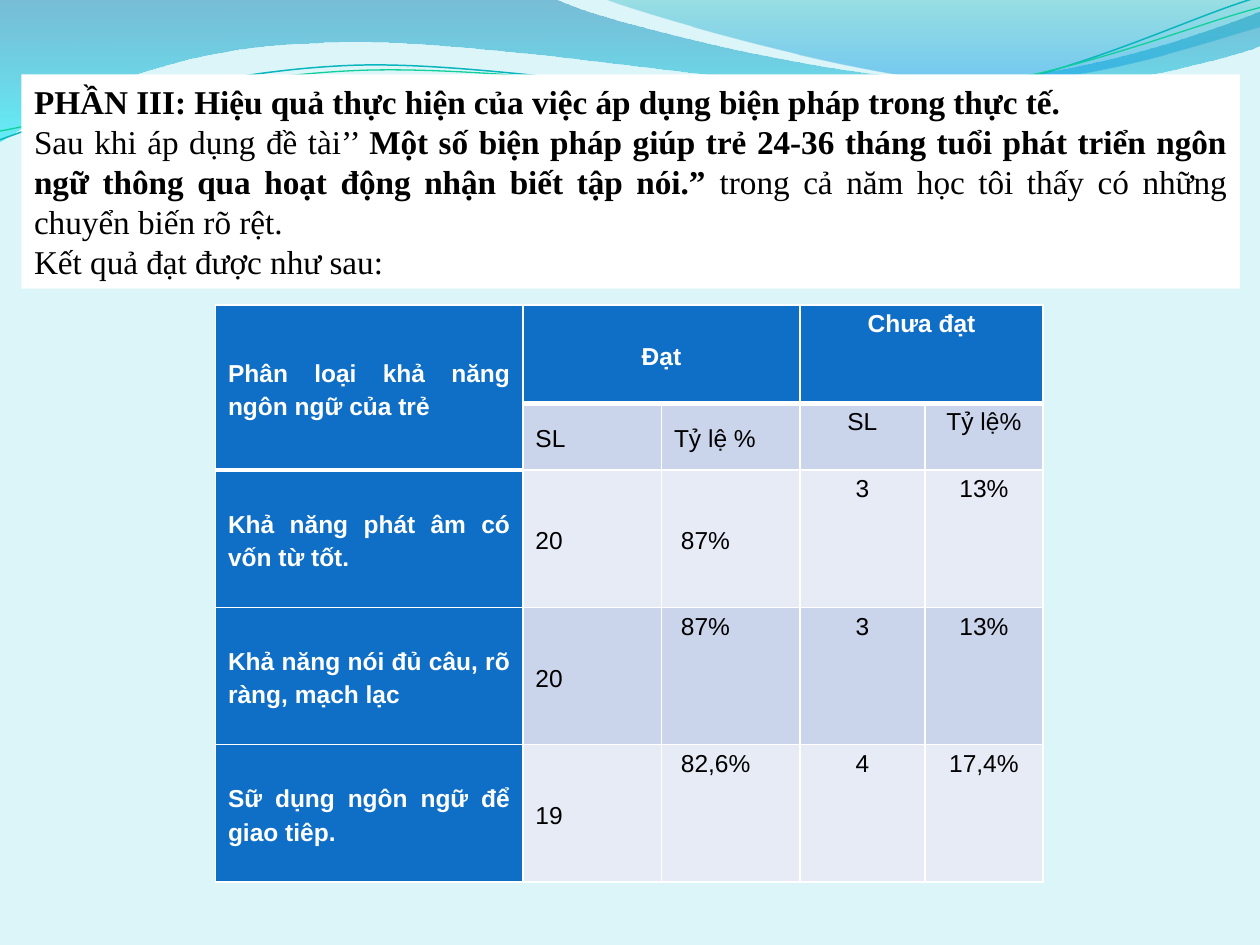
import pptx
import pptx.dml.color
import pptx.enum.text
import pptx.oxml
import pptx.oxml.ns
import pptx.util

RGBColor = pptx.dml.color.RGBColor
ALIGN = pptx.enum.text.PP_ALIGN
ANCHOR = pptx.enum.text.MSO_ANCHOR
AUTO_SIZE = pptx.enum.text.MSO_AUTO_SIZE
Pt = pptx.util.Pt
qn = pptx.oxml.ns.qn
NAMESPACE = pptx.oxml.ns.nsdecls("a")
PX = 9144  # 100 px to the inch

BACKGROUND = RGBColor(0xDB, 0xF5, 0xF9)
WHITE = RGBColor(0xFF, 0xFF, 0xFF)
BLACK = RGBColor(0x00, 0x00, 0x00)
HEADER_BLUE = RGBColor(0x0F, 0x6F, 0xC6)
BAND_DARK = RGBColor(0xCA, 0xD4, 0xEA)
BAND_LIGHT = RGBColor(0xE6, 0xEB, 0xF5)
DEEP_BLUE = RGBColor(0x00, 0x79, 0xAD)
CYAN = RGBColor(0x00, 0xE9, 0xF7)
SEA_GREEN = RGBColor(0x00, 0xAB, 0xB4)
SKY_BLUE = RGBColor(0x00, 0x99, 0xE4)
TEAL_LINE = RGBColor(0x09, 0xB6, 0xBE)
GREEN_LINE = RGBColor(0x10, 0xCF, 0x9B)

presentation = pptx.Presentation()
presentation.slide_width = 1000 * PX
presentation.slide_height = 750 * PX
slide = presentation.slides.add_slide(presentation.slide_layouts[5])
slide.background.fill.solid()
slide.background.fill.fore_color.rgb = BACKGROUND
master_placeholder = presentation.slide_master.shapes[0].element


def add_master_wave(segments, closed, shape_id):
    """Draw segments of 2 numbers as lines and of 6 as Bezier curves, on the master."""
    points = [segment[i:i + 2] for segment in segments for i in range(0, len(segment), 2)]
    builder = slide.shapes.build_freeform(*points[0], scale=PX)
    builder.add_line_segments(points[1:], close=closed)
    wave = builder.convert_to_shape()
    wave.shadow.inherit = False
    wave.element.nvSpPr.cNvPr.set("id", str(shape_id))

    corners = iter(wave.element.spPr.findall(".//" + qn("a:lnTo")))
    for segment in segments[1:]:
        group = [next(corners) for _ in range(len(segment) // 2)]
        if len(group) == 3:
            curve = pptx.oxml.parse_xml(f"<a:cubicBezTo {NAMESPACE}/>")
            group[0].addprevious(curve)
            for corner in group:
                curve.append(corner[0])
                corner.getparent().remove(corner)
    master_placeholder.addprevious(wave.element)
    return wave


# Gradient waves: outline, then stops of position %, colour, opacity %
filled_waves = [
    ([(0, 0), (440, -1), (476, 17, 664, 63, 758, 63), (853, 63, 958, 26, 1000, 9),
      (1001, 36), (983, 44, 870, 76, 746, 75), (622, 75, 382, 28, 257, 34),
      (129, 36, 46, 83, -1, 113), (0, 0)],
     [(0, DEEP_BLUE, 45), (100, CYAN, 55)]),
    ([(479, -1), (509, 11, 682, 62, 769, 65), (856, 69, 961, 32, 1000, 21),
      (1000, 0), (479, -1)],
     [(0, SEA_GREEN, 30), (80, SKY_BLUE, 45), (100, SKY_BLUE, 45)]),
]
for shape_id, (outline, stops) in enumerate(filled_waves, 101):
    wave = add_master_wave(outline, True, shape_id)
    wave.line.fill.background()
    wave.fill.gradient()
    wave.fill.gradient_angle = 270
    stop_list = wave.element.spPr.find(".//" + qn("a:gsLst"))
    for default_stop in list(stop_list):
        stop_list.remove(default_stop)
    for position, color, opacity in stops:
        stop_list.append(pptx.oxml.parse_xml(
            f'<a:gs {NAMESPACE} pos="{position * 1000}"><a:srgbClr val="{color}">'
            f'<a:alpha val="{opacity * 1000}"/></a:srgbClr></a:gs>'))

line_waves = [
    ([(0, 111), (48, 93, 158, 57, 277, 52), (395, 47, 593, 89, 713, 80),
      (833, 71, 938, 15, 998, -2)], TEAL_LINE, 0.85),
    ([(0, 104), (47, 96, 164, 61, 283, 56), (403, 51, 597, 84, 717, 75),
      (836, 67, 941, 21, 1000, 6)], GREEN_LINE, 0.75),
]
for shape_id, (outline, color, width) in enumerate(line_waves, 103):
    wave = add_master_wave(outline, False, shape_id)
    wave.fill.background()
    wave.line.color.rgb = color
    wave.line.width = Pt(width)

# Results table
column_widths = [244, 110, 110, 99, 94]
row_heights = [78, 53, 109, 109, 109]
results = [
    ["Phân loại khả năng ngôn ngữ của trẻ", "Đạt", "", "Chưa đạt", ""],
    ["", "SL", "Tỷ lệ %", "SL", "Tỷ lệ%"],
    ["Khả năng phát âm có vốn từ tốt.", "20", " 87%", "3", "13%"],
    ["Khả năng nói đủ câu, rõ ràng, mạch lạc", "20", " 87%", "3", "13%"],
    ["Sữ dụng ngôn ngữ để giao tiêp.", "19", " 82,6%", "4", "17,4%"],
]
table = slide.shapes.add_table(
    len(row_heights), len(column_widths), 171 * PX, 242 * PX,
    sum(column_widths) * PX, sum(row_heights) * PX).table
for column, width in zip(table.columns, column_widths):
    column.width = width * PX
for row, height in zip(table.rows, row_heights):
    row.height = height * PX
for first, last in [((0, 0), (1, 0)), ((0, 1), (0, 2)), ((0, 3), (0, 4))]:
    table.cell(*first).merge(table.cell(*last))

# Cells with the thick header rule below them
header_bottom = {(0, column) for column in range(5)} | {(1, 0)}
for row, texts in enumerate(results):
    for column, text in enumerate(texts):
        cell = table.cell(row, column)
        is_header = row == 0 or column == 0
        side_margin = 10 * PX if column < 3 else 0
        is_middle = column < 2 or (column == 2 and row < 3)
        cell_format = {
            "margin_left": side_margin, "margin_right": side_margin,
            "margin_top": 0, "margin_bottom": 0,
            "vertical_anchor": ANCHOR.MIDDLE if is_middle else ANCHOR.TOP,
        }
        for name, value in cell_format.items():
            setattr(cell, name, value)

        properties = cell._tc.get_or_add_tcPr()
        thick_sides = {"T": (row - 1, column) in header_bottom and (row, column) != (1, 0),
                       "B": (row, column) in header_bottom}
        for side in "LRTB":
            points = 3 if thick_sides.get(side) else 1
            properties.append(pptx.oxml.parse_xml(
                f'<a:ln{side} {NAMESPACE} w="{Pt(points)}">'
                f'<a:solidFill><a:srgbClr val="{WHITE}"/></a:solidFill></a:ln{side}>'))
        cell.fill.solid()
        band = BAND_DARK if row % 2 else BAND_LIGHT
        cell.fill.fore_color.rgb = HEADER_BLUE if is_header else band

        if not text:
            continue
        paragraph = cell.text_frame.paragraphs[0]
        is_centered = column > 2 or (row == 0 and column > 0)
        paragraph.alignment = ALIGN.CENTER if is_centered else ALIGN.JUSTIFY
        paragraph.line_spacing = 1.2
        run = paragraph.add_run()
        run.text = text
        for name, value in {"name": "Arial", "size": Pt(14), "bold": is_header}.items():
            setattr(run.font, name, value)
        run.font.color.rgb = WHITE if is_header else BLACK

# Introduction on a white panel, in front of the table
title = slide.shapes.title
title.element.getparent().append(title.element)
title_box = {"left": 17, "top": 59, "width": 967, "height": 170}
for name, value in title_box.items():
    setattr(title, name, value * PX)
title.fill.solid()
title.fill.fore_color.rgb = WHITE
frame_format = {
    "word_wrap": True, "auto_size": AUTO_SIZE.SHAPE_TO_FIT_TEXT,
    "vertical_anchor": ANCHOR.MIDDLE, "margin_left": 10 * PX, "margin_right": 10 * PX,
    "margin_top": 5 * PX, "margin_bottom": 5 * PX,
}
for name, value in frame_format.items():
    setattr(title.text_frame, name, value)

# Paragraphs of (text, bold) runs
introduction = [
    [("PHẦN III: Hiệu quả thực hiện của việc áp dụng biện pháp trong thực tế.", True)],
    [("Sau khi áp dụng đề tài’’ ", False),
     ("Một số biện pháp giúp trẻ 24-36 tháng tuổi phát triển ngôn ngữ "
      "thông qua hoạt động nhận biết tập nói.” ", True),
     ("trong cả năm học tôi thấy có những chuyển biến rõ rệt.", False)],
    [("Kết quả đạt được như sau:", False)],
]
for index, runs in enumerate(introduction):
    frame = title.text_frame
    paragraph = frame.add_paragraph() if index else frame.paragraphs[0]
    paragraph.alignment = ALIGN.JUSTIFY
    for text, bold in runs:
        run = paragraph.add_run()
        run.text = text
        for name, value in {"name": "Times New Roman", "size": Pt(19), "bold": bold}.items():
            setattr(run.font, name, value)
        run.font.color.rgb = BLACK

presentation.save("out.pptx")
